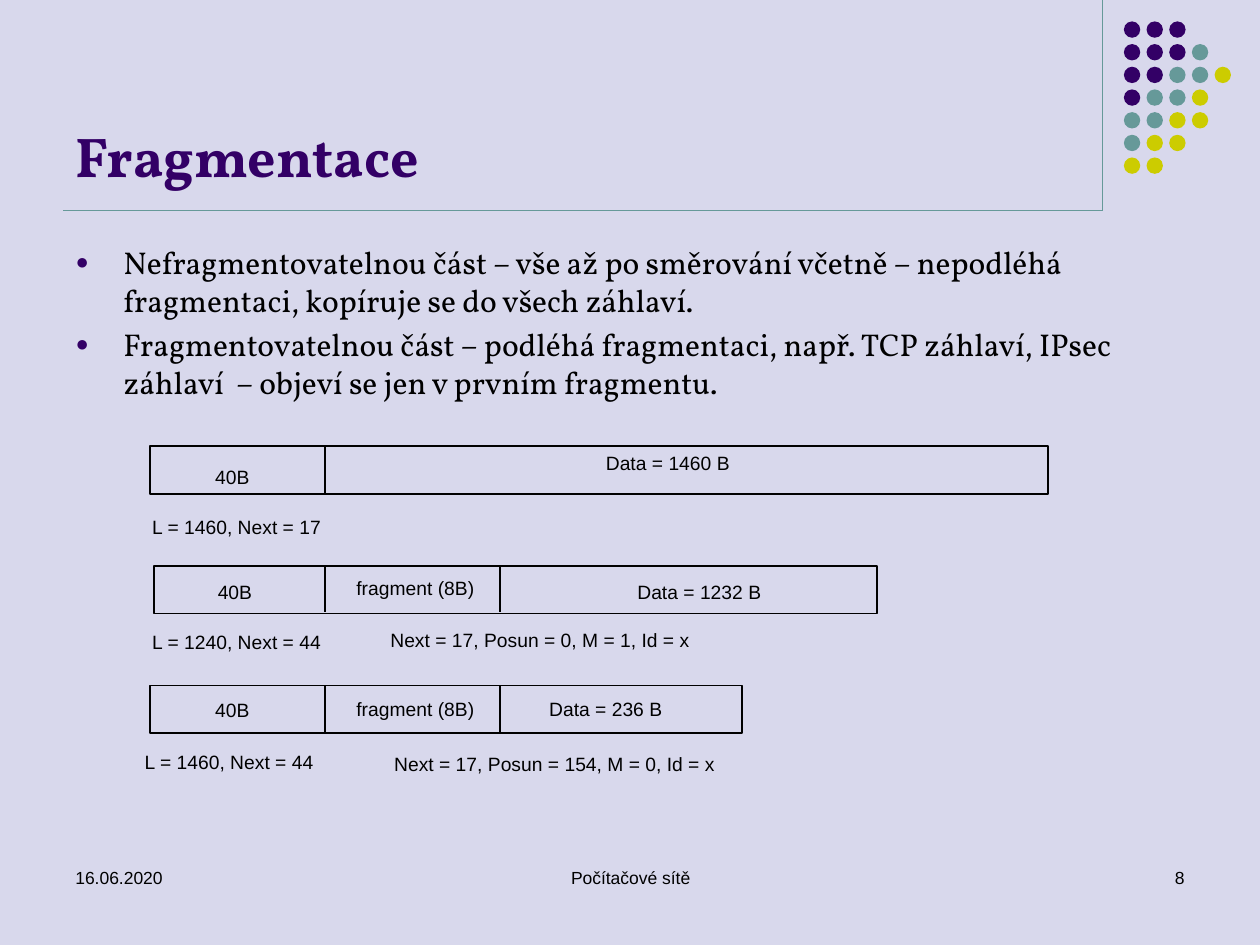
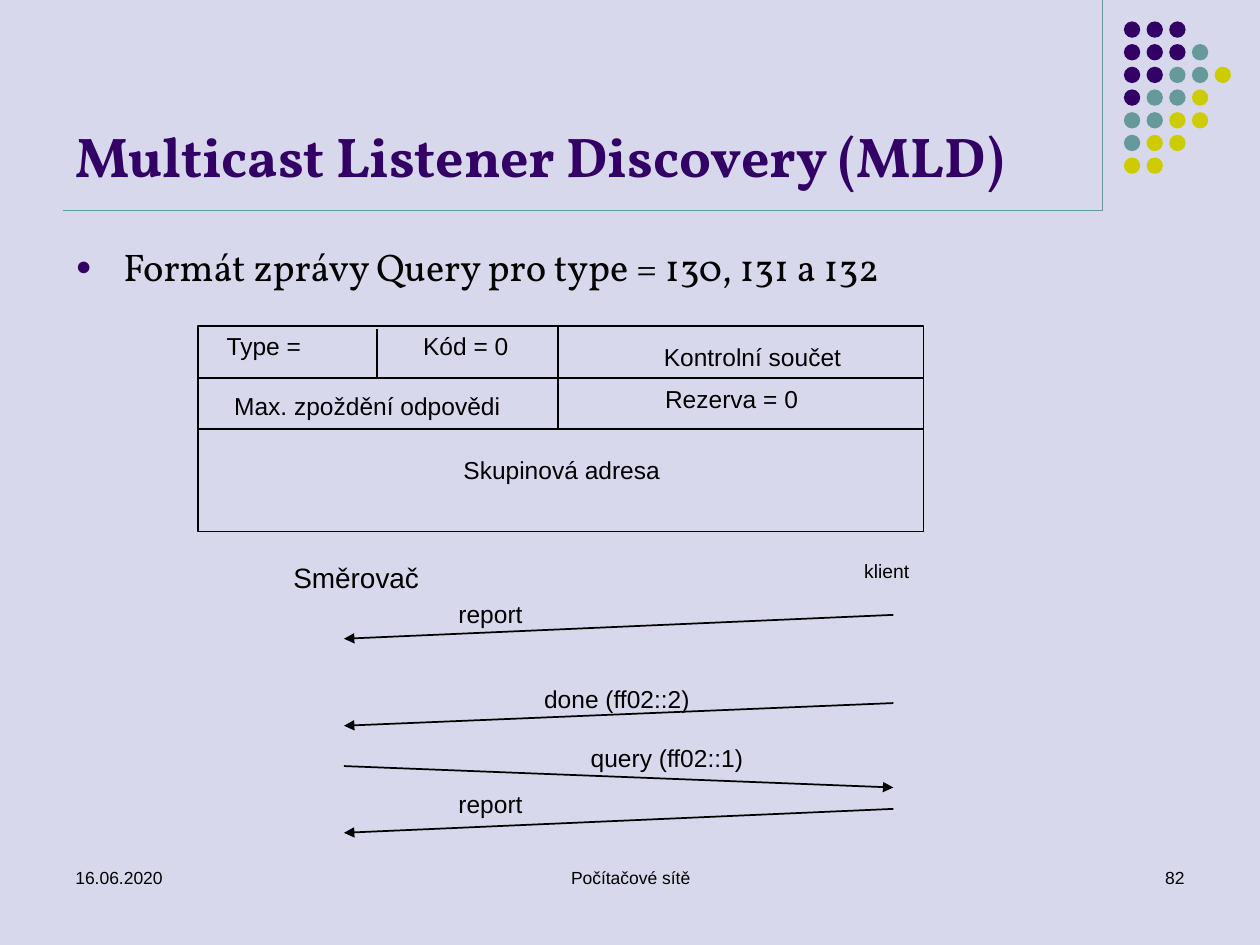
from lxml import etree
from pptx import Presentation
from pptx.dml.color import RGBColor
from pptx.enum.shapes import MSO_CONNECTOR, MSO_SHAPE
from pptx.enum.text import MSO_ANCHOR, MSO_AUTO_SIZE, PP_ALIGN
from pptx.oxml.ns import qn
from pptx.util import Inches, Pt

STRAIGHT = MSO_CONNECTOR.STRAIGHT
RECT, OVAL = MSO_SHAPE.RECTANGLE, MSO_SHAPE.OVAL
LEFT, CENTER, RIGHT = PP_ALIGN.LEFT, PP_ALIGN.CENTER, PP_ALIGN.RIGHT
TOP, BOTTOM = MSO_ANCHOR.TOP, MSO_ANCHOR.BOTTOM
NO_FIT = MSO_AUTO_SIZE.NONE
LEFT_SIDE, RIGHT_SIDE = 1, 3

# Grid of the slide
COLS, ROWS = 10, 7.5

# Shared style
PAPER, INK = "D8D8EC", "000000"
PURPLE, TEAL, LIME = "330066", "669999", "CCCC00"
SERIF, SANS = "Vollkorn", "Arial"
DOT_COLORS = {"P": PURPLE, "T": TEAL, "L": LIME}
DOT_ROWS = ["PPP", "PPPT", "PPTTL", "PTTL", "TTLL", "TLL", "LL"]
DOT_PITCH, DOT_SIZE = 0.18, 0.13
DATE, COURSE = "16.06.2020", "Počítačové sítě"


def rgb(color):
    return RGBColor.from_string(color)


def add_xml(parent, tag, **attrs):
    return etree.SubElement(parent, qn(tag), attrs)


class Deck:
    def __init__(self):
        self.prs = Presentation()
        self.prs.slide_width, self.prs.slide_height = Inches(10), Inches(7.5)
        fill = self.prs.slide_master.background.fill
        fill.solid()
        fill.fore_color.rgb = rgb(PAPER)
        self.s = None

    def x(self, cols):
        return round(self.prs.slide_width * cols / COLS)

    def y(self, rows):
        return round(self.prs.slide_height * rows / ROWS)

    def box(self, left, top, width, height):
        return self.x(left), self.y(top), self.x(width), self.y(height)

    def place(self, sp, *box):
        sp.left, sp.top, sp.width, sp.height = self.box(*box)

    def frame(self, sp, anchor=TOP):
        tf = sp.text_frame
        tf.word_wrap, tf.auto_size, tf.vertical_anchor = True, NO_FIT, anchor
        return tf

    def set_text(self, p, text, size, font=SANS, color=INK, bold=False, align=LEFT):
        p.text, p.alignment = text, align
        f = p.font
        f.size, f.name, f.bold = Pt(size), font, bold
        f.color.rgb = rgb(color)

    def slide(self, title, number):
        self.s = self.prs.slides.add_slide(self.prs.slide_layouts[1])
        sp = self.s.shapes.title
        self.place(sp, 0.5, 0.13, 8.25, 1.42)
        p = self.frame(sp, BOTTOM).paragraphs[0]
        self.set_text(p, title, 32, SERIF, PURPLE, True)
        # Corner ornament
        self.line(8.75, 0, 8.75, 1.67, TEAL, 0.75)
        self.line(0.5, 1.67, 8.75, 1.67, TEAL, 0.75)
        for row, codes in enumerate(DOT_ROWS):
            for col, code in enumerate(codes):
                self.shape(OVAL, 8.92 + col * DOT_PITCH, 0.17 + row * DOT_PITCH,
                           DOT_SIZE, DOT_SIZE, fill=DOT_COLORS[code])
        # Footer
        self.label(DATE, 0.5, 6.83, 2.33, size=10, spacing=1)
        self.label(COURSE, 3.42, 6.83, 3.17, size=10, align=CENTER, spacing=1)
        self.label(str(number), 7.17, 6.83, 2.33, size=10, align=RIGHT, spacing=1)

    def bullets(self, items, size, height):
        sp = self.s.placeholders[1]
        self.place(sp, 0.5, 1.88, 9, height)
        tf = self.frame(sp)
        for i, item in enumerate(items):
            p = tf.add_paragraph() if i else tf.paragraphs[0]
            pPr = p._p.get_or_add_pPr()
            pPr.set("marL", str(Inches(0.38)))
            pPr.set("indent", str(-Inches(0.38)))
            add_xml(add_xml(pPr, "a:buClr"), "a:srgbClr", val=PURPLE)
            add_xml(pPr, "a:buSzPct", val="70000")
            add_xml(pPr, "a:buFont", typeface=SANS)
            add_xml(pPr, "a:buChar", char="●")
            p.space_before = Pt(size * 0.2)
            self.set_text(p, item, size, SERIF)

    def shape(self, kind, left, top, width, height, fill=None, line=None):
        sp = self.s.shapes.add_shape(kind, *self.box(left, top, width, height))
        sp.shadow.inherit = False
        if fill:
            sp.fill.solid()
            sp.fill.fore_color.rgb = rgb(fill)
        else:
            sp.fill.background()
        if line:
            sp.line.color.rgb, sp.line.width = rgb(line), Pt(1)
        else:
            sp.line.fill.background()
        return sp

    def line(self, x1, y1, x2, y2, color=INK, width=1, arrow=False):
        c = self.s.shapes.add_connector(STRAIGHT, self.x(x1), self.y(y1),
                                        self.x(x2), self.y(y2))
        c.line.color.rgb, c.line.width = rgb(color), Pt(width)
        spPr = c.element.spPr
        if arrow:
            add_xml(spPr.find(qn("a:ln")), "a:tailEnd", type="triangle")
        add_xml(spPr, "a:effectLst")
        return c

    def label(self, text, left, top, width, height=0.5, size=11, align=LEFT,
              spacing=1.07):
        sp = self.s.shapes.add_textbox(*self.box(left, top, width, height))
        p = self.frame(sp).paragraphs[0]
        p.line_spacing = spacing
        self.set_text(p, text, size, align=align)


def fragmentation(deck):
    deck.slide("Fragmentace", 8)
    deck.bullets([
        "Nefragmentovatelnou část – vše až po směrování včetně – nepodléhá "
        "fragmentaci, kopíruje se do všech záhlaví.",
        "Fragmentovatelnou část – podléhá fragmentaci, např. TCP záhlaví, IPsec "
        "záhlaví  – objeví se jen v prvním fragmentu.",
    ], 18, 1.48)

    # Packets: left, top, width, cell dividers
    packets = [(1.19, 3.54, 7.13, [2.58]),
               (1.22, 4.49, 5.74, [2.58, 3.97]),
               (1.19, 5.44, 4.7, [2.58, 3.97])]
    for left, top, width, dividers in packets:
        deck.shape(RECT, left, top, width, 0.38, line=INK)
        for x in dividers:
            deck.line(x, top, x, top + 0.37)

    # Cell texts and header fields
    for text, left, top, width in [
            ("40B", 1.61, 3.63, 0.62),
            ("40B", 1.63, 4.54, 0.62),
            ("40B", 1.61, 5.48, 0.62),
            ("fragment (8B)", 2.73, 4.51, 1.49),
            ("fragment (8B)", 2.73, 5.47, 1.49),
            ("Data = 1460 B", 4.71, 3.52, 1.49),
            ("Data = 1232 B", 4.96, 4.54, 1.49),
            ("Data = 236 B", 4.26, 5.47, 1.38),
            ("L = 1460, Next = 17", 1.11, 4.03, 1.94),
            ("L = 1240, Next = 44", 1.11, 4.94, 1.94),
            ("L = 1460, Next = 44", 1.05, 5.89, 1.94)]:
        deck.label(text, left, top, width, 0.45)
    deck.label("Next = 17, Posun = 0, M = 1, Id = x", 3, 4.94, 3.2, 0.42, spacing=1)
    deck.label("Next = 17, Posun = 154, M = 0, Id = x", 3.03, 5.92, 3.42, 0.42,
               spacing=1)


def listener_discovery(deck):
    deck.slide("Multicast Listener Discovery (MLD)", 82)
    deck.bullets(["Formát zprávy Query pro type = 130, 131 a 132"], 22, 0.53)

    # Message format
    left, top, width, height = 1.57, 2.59, 5.76, 1.63
    right, middle, quarter = left + width, top + height / 2, top + height / 4
    message = deck.shape(RECT, left, top, width, height, line=INK)
    deck.line(2.99, 2.61, 2.99, quarter)
    deck.line(4.43, top, 4.43, middle)
    deck.line(left, quarter, right, quarter)
    c = deck.line(left, middle, right, middle)
    c.begin_connect(message, LEFT_SIDE)
    c.end_connect(message, RIGHT_SIDE)
    for text, x, y, w in [
            ("Type =", 1.7, 2.56, 0.89),
            ("Kód = 0", 3.26, 2.56, 1.16),
            ("Kontrolní součet", 5.17, 2.65, 1.97),
            ("Max. zpoždění odpovědi", 1.76, 3.04, 2.6),
            ("Rezerva = 0", 5.18, 2.98, 1.5),
            ("Skupinová adresa", 3.58, 3.55, 1.97)]:
        deck.label(text, x, y, w, size=14)

    # Exchange between router and client
    router, client = 2.73, 7.09
    deck.label("Směrovač", 2.23, 4.38, 1.4, 0.4, size=16)
    deck.label("klient", 6.76, 4.38, 0.72)
    for text, x, y, start, y1, end, y2 in [
            ("report", 3.54, 4.69, client, 4.88, router, 5.07),
            ("done (ff02::2)", 4.22, 5.36, client, 5.58, router, 5.76),
            ("query (ff02::1)", 4.59, 5.83, router, 6.08, client, 6.25),
            ("report", 3.54, 6.2, client, 6.42, router, 6.61)]:
        deck.line(start, y1, end, y2, arrow=True)
        deck.label(text, x, y, 1.6, 0.4, size=14)


def main():
    deck = Deck()
    fragmentation(deck)
    listener_discovery(deck)
    deck.prs.save("out.pptx")


if __name__ == "__main__":
    main()
